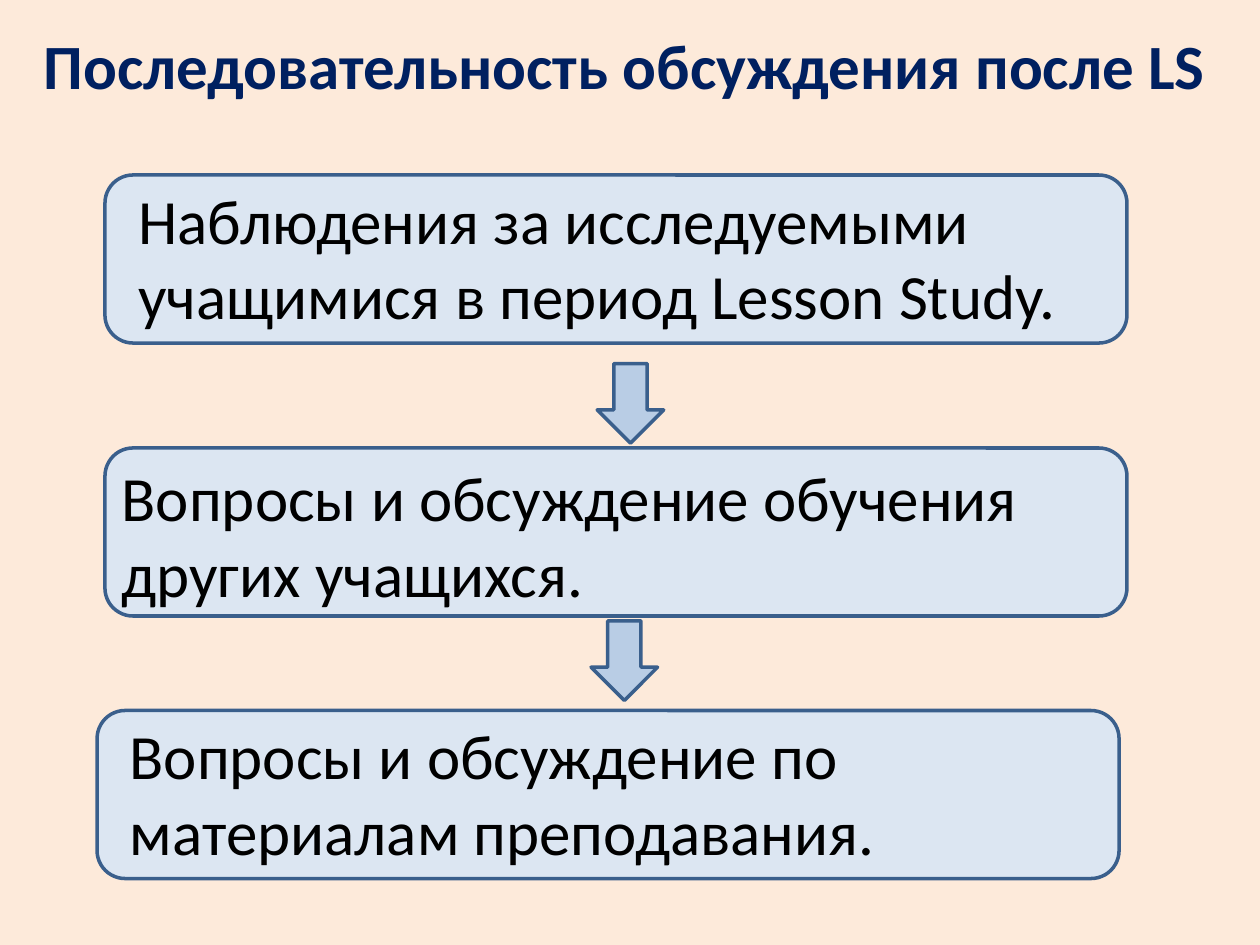
from dataclasses import dataclass

import pptx
import pptx.dml.color
import pptx.enum.shapes
import pptx.enum.text
import pptx.util

Pt = pptx.util.Pt
ShapeType = pptx.enum.shapes.MSO_SHAPE
Align = pptx.enum.text.PP_ALIGN
Anchor = pptx.enum.text.MSO_ANCHOR
AutoSize = pptx.enum.text.MSO_AUTO_SIZE


@dataclass(frozen=True)
class Theme:
    background: str = "FDEADA"
    title: str = "002060"
    text: str = "000000"
    panel: str = "DCE6F2"
    arrow: str = "B9CDE5"
    outline: str = "3A5F8C"
    font: str = "Calibri"
    size: int = 36
    outline_width: int = 2


THEME = Theme()
PANEL_SIZE = (584, 96)
TEXT_SIZE = (569.5, 94.5)
ARROW_SIZE = (45.5, 38)

# Panel left and top, text left and top, wording
STEPS = [
    ((60, 100), (72, 100), "Наблюдения за исследуемыми учащимися в период Lesson Study."),
    ((60, 256), (62.5, 258.5), "Вопросы и обсуждение обучения других учащихся."),
    ((55.5, 406), (67, 406), "Вопросы и обсуждение по материалам преподавания."),
]
ARROWS = [(337.5, 211.5), (334, 358.5)]


def color(value):
    return pptx.dml.color.RGBColor.from_string(value)


def points(*values):
    return [Pt(value) for value in values]


def write_text(shape, text, *, fill=THEME.text, bold=False, align=Align.LEFT,
               anchor=Anchor.TOP, auto_size=AutoSize.NONE):
    frame = shape.text_frame
    frame.word_wrap = True
    frame.auto_size = auto_size
    frame.vertical_anchor = anchor
    paragraph = frame.paragraphs[0]
    paragraph.alignment = align
    run = paragraph.add_run()
    run.text = text
    run.font.name = THEME.font
    run.font.size = Pt(THEME.size)
    run.font.bold = bold
    run.font.color.rgb = color(fill)


def add_title(slide, text):
    title = slide.shapes.title
    title.left, title.top, title.width, title.height = points(11, 9.5, 692, 54.5)
    write_text(title, text, fill=THEME.title, bold=True, align=Align.CENTER,
               anchor=Anchor.MIDDLE)


def add_outlined_shape(shapes, kind, position, size, fill):
    shape = shapes.add_shape(kind, *points(*position, *size))
    shape.shadow.inherit = False
    shape.fill.solid()
    shape.fill.fore_color.rgb = color(fill)
    shape.line.color.rgb = color(THEME.outline)
    shape.line.width = Pt(THEME.outline_width)
    return shape


def add_step(slide, panel_position, text_position, text):
    """Group a rounded panel with the text box that lies on it."""
    group = slide.shapes.add_group_shape()
    add_outlined_shape(group.shapes, ShapeType.ROUNDED_RECTANGLE,
                       panel_position, PANEL_SIZE, THEME.panel)
    text_box = group.shapes.add_textbox(*points(*text_position, *TEXT_SIZE))
    write_text(text_box, text, auto_size=AutoSize.SHAPE_TO_FIT_TEXT)


def add_down_arrow(slide, position):
    arrow = add_outlined_shape(slide.shapes, ShapeType.RIGHT_ARROW,
                               position, ARROW_SIZE, THEME.arrow)
    arrow.rotation = 90


def main():
    presentation = pptx.Presentation()
    presentation.slide_width, presentation.slide_height = points(720, 540)
    slide = presentation.slides.add_slide(presentation.slide_layouts[5])
    slide.background.fill.solid()
    slide.background.fill.fore_color.rgb = color(THEME.background)

    add_title(slide, "Последовательность обсуждения после LS")
    for step in STEPS:
        add_step(slide, *step)
    for position in ARROWS:
        add_down_arrow(slide, position)
    presentation.save("out.pptx")


if __name__ == "__main__":
    main()
